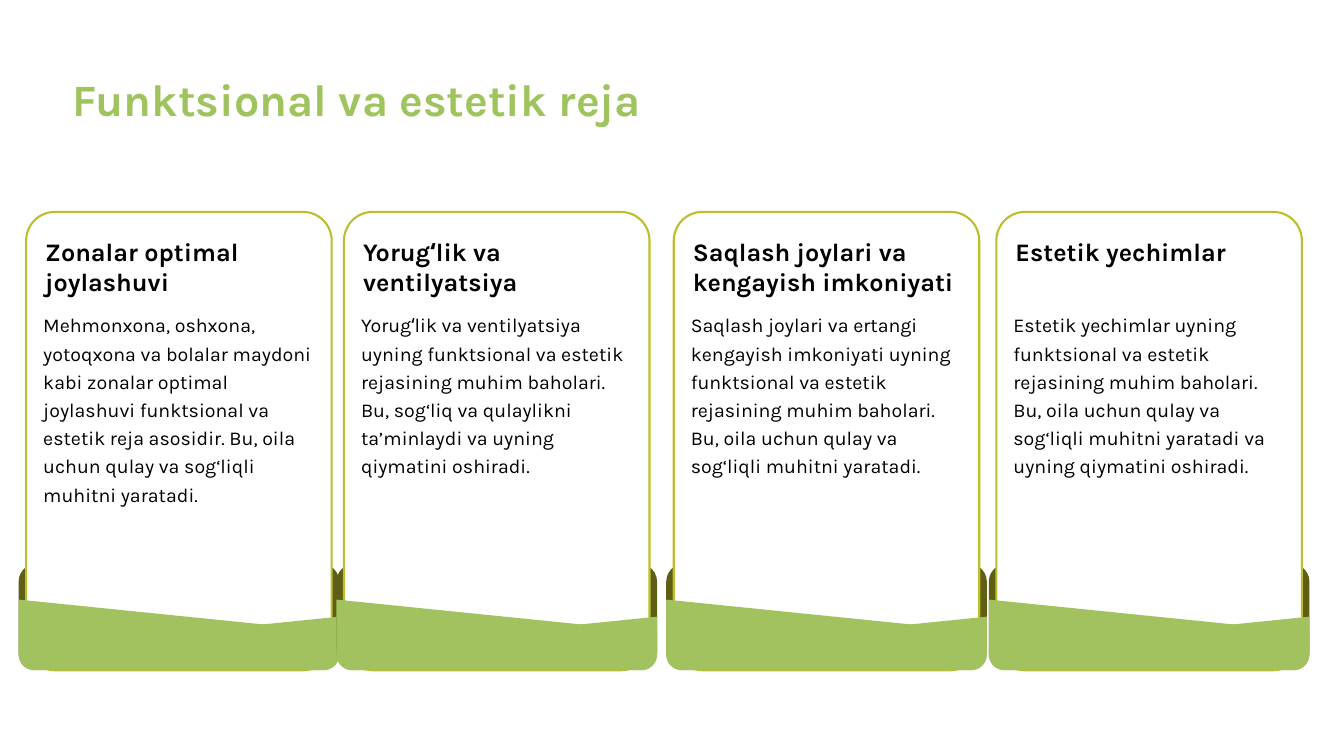
import math
from dataclasses import dataclass

from pptx import Presentation
from pptx import util as u
from pptx.dml.color import RGBColor
from pptx.enum import shapes, text


@dataclass(frozen=True)
class Theme:
    """Colours, font and type sizes."""
    font: str = "Karla"
    title: str = "9FC35D"
    ink: str = "000000"
    card: str = "FFFFFF"
    border: str = "BCBE2B"
    back: str = "5E5F15"
    ribbon: str = "A1C25E"
    title_size: int = 32
    head_size: int = 18
    body_size: int = 14


def write(tf, content, size, color, font, bold=False, spacing=1.0, anchor=text.MSO_ANCHOR.TOP):
    """Put one formatted paragraph in a text frame."""
    tf.word_wrap = True
    tf.auto_size = text.MSO_AUTO_SIZE.NONE
    tf.vertical_anchor = anchor
    p = tf.paragraphs[0]
    p.alignment = text.PP_ALIGN.LEFT
    p.line_spacing = spacing
    r = p.add_run()
    r.text = content
    r.font.name = font
    r.font.size = u.Pt(size)
    r.font.bold = bold
    r.font.color.rgb = RGBColor.from_string(color)


class Deck:
    """Draws styled elements on the current slide."""

    def __init__(self, prs, theme):
        """Add a title-only slide."""
        self.theme = theme
        self.s = prs.slides.add_slide(prs.slide_layouts[5])

    def title(self, content, x, y, w, h):
        """Place and format the title."""
        sp = self.s.shapes.title
        sp.left, sp.top, sp.width, sp.height = map(u.Cm, (x, y, w, h))
        write(sp.text_frame, content, self.theme.title_size, self.theme.title,
              self.theme.font, bold=True, anchor=text.MSO_ANCHOR.MIDDLE)

    def label(self, content, x, y, w, h, size, **fmt):
        """Add a text box."""
        sp = self.s.shapes.add_textbox(*map(u.Cm, (x, y, w, h)))
        write(sp.text_frame, content, size, self.theme.ink, self.theme.font, **fmt)

    def paint(self, sp, fill, line=None):
        """Set fill and outline without a shadow."""
        sp.shadow.inherit = False
        sp.fill.solid()
        sp.fill.fore_color.rgb = RGBColor.from_string(fill)
        if line:
            sp.line.color.rgb = RGBColor.from_string(line)
            sp.line.width = u.Pt(1.5)
        else:
            sp.line.fill.background()

    def rounded(self, x, y, w, h, adj, fill, line=None):
        """Add a rounded rectangle."""
        sp = self.s.shapes.add_shape(
            shapes.MSO_SHAPE.ROUNDED_RECTANGLE, *map(u.Cm, (x, y, w, h)))
        sp.adjustments[0] = adj
        self.paint(sp, fill, line)

    def ribbon(self, x, w, left_top, right_top, bottom, radius=0.4):
        """Add a band with a sloping top and rounded bottom corners."""
        points = [(x, left_top), (x + w, right_top)]
        for cx, start in ((x + w - radius, 0), (x + radius, 90)):
            for step in range(0, 91, 10):
                a = math.radians(start + step)
                points.append((cx + radius * math.cos(a),
                               bottom - radius + radius * math.sin(a)))
        points = [(u.Cm(px), u.Cm(py)) for px, py in points]
        builder = self.s.shapes.build_freeform(*points[0])
        builder.add_line_segments(points[1:], close=True)
        self.paint(builder.convert_to_shape(), self.theme.ribbon)

    def card(self, x, head, body):
        """Add one card with its base, heading and text."""
        t = self.theme
        width, bottom = 8.08, 16.89
        self.rounded(x, 14.21, width, 2.67, 0.167, t.back)
        self.rounded(x + 0.19, 5.34, 7.7, 11.55, 0.094, t.card, t.border)
        self.label(head, x + 0.42, 5.82, 7.39, 1.8, t.head_size, bold=True)
        self.label(body, x + 0.37, 7.65, 7.49, 5.99, t.body_size, spacing=1.2)
        for left_top, right_top in ((15.11, 15.93), (16.36, 15.54)):
            self.ribbon(x, width, left_top, right_top, bottom)


CARDS = [
    (0.47, "Zonalar optimal joylashuvi",
     "Mehmonxona, oshxona, yotoqxona va bolalar maydoni kabi zonalar optimal joylashuvi "
     "funktsional va estetik reja asosidir. Bu, oila uchun qulay va sog‘liqli muhitni yaratadi."),
    (8.48, "Yorugʻlik va ventilyatsiya",
     "Yorugʻlik va ventilyatsiya uyning funktsional va estetik rejasining muhim baholari. "
     "Bu, sog‘liq va qulaylikni ta’minlaydi va uyning qiymatini oshiradi."),
    (16.79, "Saqlash joylari va kengayish imkoniyati",
     "Saqlash joylari va ertangi kengayish imkoniyati uyning funktsional va estetik "
     "rejasining muhim baholari. Bu, oila uchun qulay va sog‘liqli muhitni yaratadi."),
    (24.92, "Estetik yechimlar",
     "Estetik yechimlar uyning funktsional va estetik rejasining muhim baholari. Bu, oila "
     "uchun qulay va sog‘liqli muhitni yaratadi va uyning qiymatini oshiradi."),
]


def main():
    """Build and save the slide."""
    prs = Presentation()
    prs.slide_width, prs.slide_height = u.Cm(33.87), u.Cm(19.05)
    deck = Deck(prs, Theme())
    deck.title("Funktsional va estetik reja", 1.57, 1.68, 27.23, 1.63)
    for x, head, body in CARDS:
        deck.card(x, head, body)
    prs.save("out.pptx")


if __name__ == "__main__":
    main()
